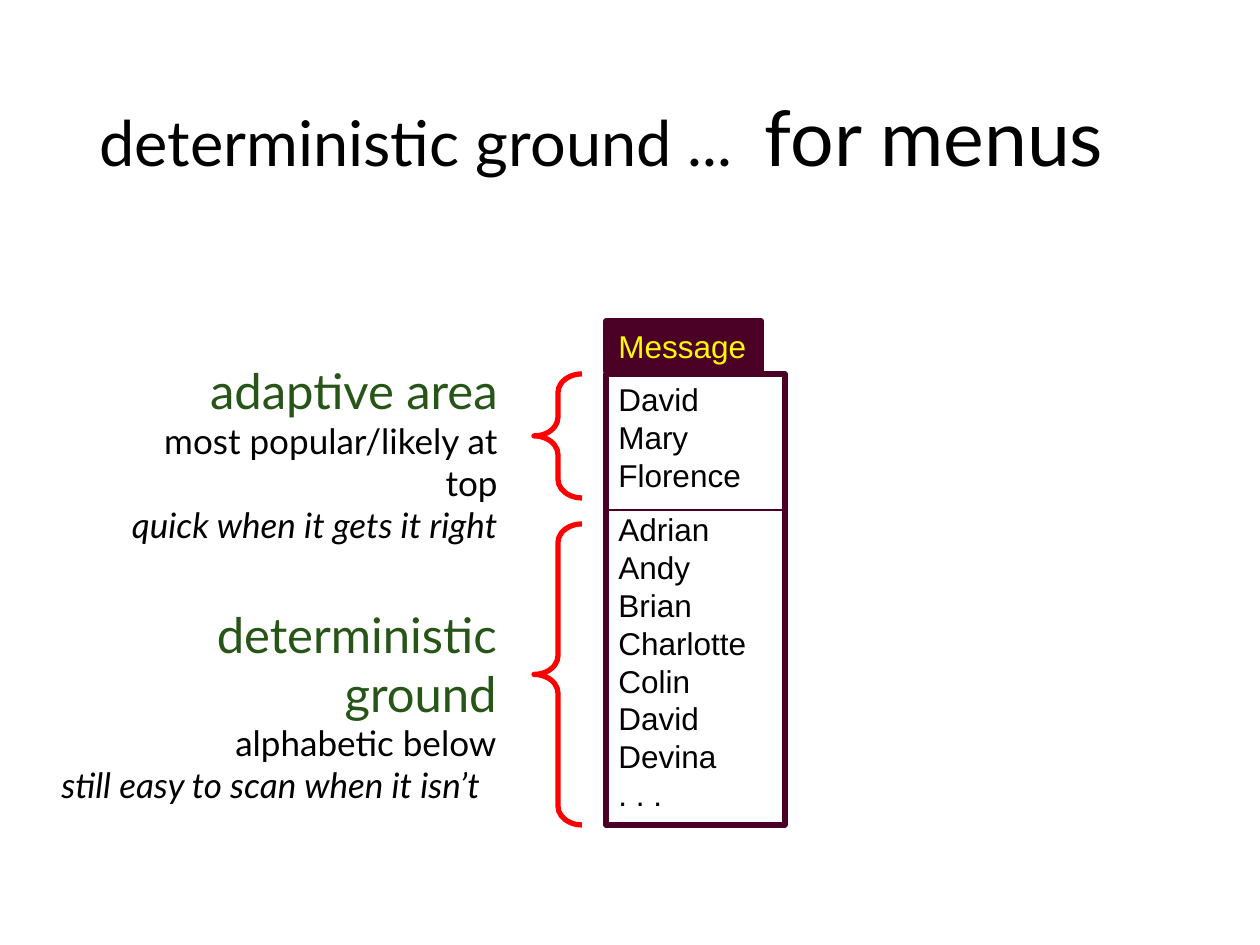
from lxml.etree import SubElement
from pptx import Presentation
from pptx.dml.color import RGBColor
from pptx.enum.shapes import MSO_CONNECTOR, MSO_SHAPE
from pptx.enum.text import MSO_ANCHOR, PP_ALIGN
from pptx.oxml.ns import qn
from pptx.util import Emu, Pt

BLACK = RGBColor(0x00, 0x00, 0x00)
PLUM = RGBColor(0x4B, 0x00, 0x25)
YELLOW = RGBColor(0xFF, 0xFB, 0x00)
GREEN = RGBColor(0x27, 0x54, 0x17)
RED = RGBColor(0xFF, 0x00, 0x00)

HEADING_FONT = "Lato"
MENU_FONT = "Arial"
PIXELS_PER_INCH = 126


def px(*lengths):
    return [Emu(round(length * 914400 / PIXELS_PER_INCH)) for length in lengths]


class Page:
    """Holds the current slide and the style of its elements."""

    def __init__(self, deck):
        self.slide = deck.slides.add_slide(deck.slide_layouts[5])
        self.shapes = self.slide.shapes

    def span(self, para, text, size, color=BLACK, font=HEADING_FONT, italic=False):
        run = para.add_run()
        run.text = text
        run.font.name = font
        run.font.size = Pt(size)
        run.font.color.rgb = color
        run.font.italic = italic

    def title(self, place, spans):
        box = self.shapes.title
        box.left, box.top, box.width, box.height = px(*place)
        box.text_frame.vertical_anchor = MSO_ANCHOR.MIDDLE
        para = box.text_frame.paragraphs[0]
        para.alignment = PP_ALIGN.LEFT
        para.line_spacing = 0.9
        for text, size in spans:
            self.span(para, text, size)

    def shape(self, kind, place, line_color, fill=None):
        shape = self.shapes.add_shape(kind, *px(*place))
        shape.shadow.inherit = False
        shape.line.color.rgb = line_color
        shape.line.width = Pt(3)
        if fill is None:
            shape.fill.background()
        else:
            shape.fill.solid()
            shape.fill.fore_color.rgb = fill
        return shape

    def menu_box(self, place, groups, color=BLACK, fill=None):
        """A box of menu entries, with a small gap between groups."""
        frame = self.shape(MSO_SHAPE.RECTANGLE, place, PLUM, fill).text_frame
        frame.word_wrap = False
        frame.vertical_anchor = MSO_ANCHOR.TOP
        para = frame.paragraphs[0]
        for group_index, group in enumerate(groups):
            for index, entry in enumerate(group):
                if group_index or index:
                    para = frame.add_paragraph()
                if group_index and index == 0:
                    para.space_before = Pt(9.6)
                para.alignment = PP_ALIGN.LEFT
                para.line_spacing = Pt(21.6)
                self.span(para, entry, 18, color, MENU_FONT)

    def divider(self, left, right, y):
        line = self.shapes.add_connector(MSO_CONNECTOR.STRAIGHT, *px(left, y, right, y))
        line.line.color.rgb = PLUM
        line.line.width = Pt(0.75)
        SubElement(line._element.spPr, qn("a:effectLst"))

    def label(self, place, heading, detail, remark):
        frame = self.shapes.add_textbox(*px(*place)).text_frame
        frame.word_wrap = True
        para = frame.paragraphs[0]
        para.alignment = PP_ALIGN.RIGHT
        self.span(para, heading, 28, GREEN)
        para.add_line_break()
        self.span(para, detail, 20)
        para.add_line_break()
        self.span(para, remark, 20, italic=True)

    def brace(self, top, height):
        brace = self.shape(MSO_SHAPE.LEFT_BRACE, (534, top, 48, height), RED)
        brace.adjustments[0] = 0.39
        brace.adjustments[1] = 0.5


def main():
    deck = Presentation()
    deck.slide_width, deck.slide_height = px(1260, 945)
    page = Page(deck)

    page.title((87, 50, 1086, 183), [("deterministic ground ...  ", 36), ("for menus", 44)])

    # Menu: popular names on top, alphabetic list below
    popular = ["David", "Mary", "Florence"]
    alphabetic = ["Adrian", "Andy", "Brian", "Charlotte", "Colin", "David", "Devina", ". . ."]
    page.menu_box((606, 374, 179, 451), [popular, alphabetic])
    page.menu_box((606, 321, 155, 50), [["Message"]], YELLOW, PLUM)
    page.divider(606, 785, 510)

    # Explanations of the two areas
    page.label((94, 354, 416, 158), "adaptive area",
               "most popular/likely at top", "quick when it gets it right")
    page.label((42, 598, 467, 158), "deterministic ground",
               "alphabetic below", "still easy to scan when it isn’t  ")

    # Braces joining explanations to the menu
    page.brace(374, 124)
    page.brace(524, 301)

    deck.save("out.pptx")


if __name__ == "__main__":
    main()
